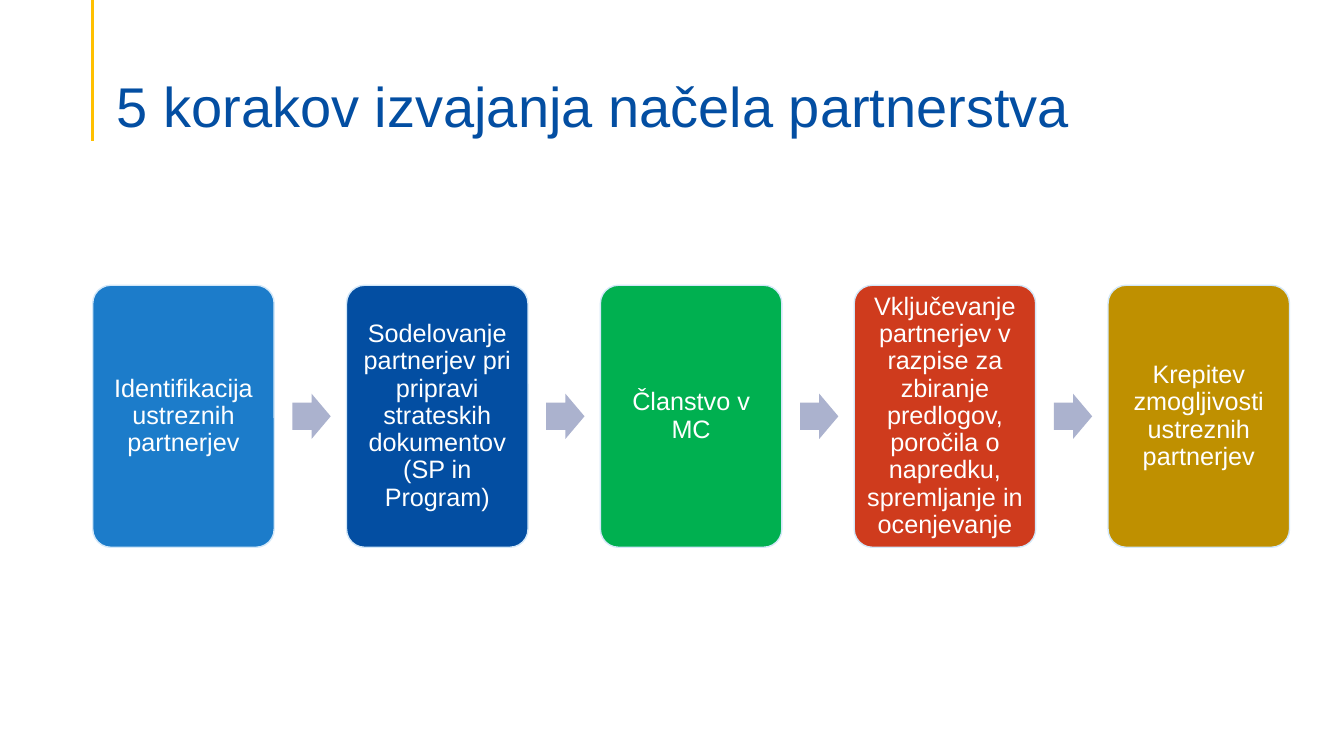
import pptx
import pptx.util
import pptx.dml.color
import pptx.enum.shapes
import pptx.enum.text
import lxml.etree

Inches = pptx.util.Inches
Pt = pptx.util.Pt
Shape = pptx.enum.shapes.MSO_SHAPE
Anchor = pptx.enum.text.MSO_ANCHOR
Align = pptx.enum.text.PP_ALIGN

COLOURS = {
    "rule": "FFC000",
    "title": "034EA2",
    "arrow": "ABB2CE",
    "outline": "D3E8F9",
    "text": "FFFFFF",
    "sky": "1C7CCA",
    "navy": "034EA2",
    "green": "00B050",
    "red": "CF3B1D",
    "ochre": "BF9000",
}
STEPS = [
    ("Identifikacija ustreznih partnerjev", "sky"),
    ("Sodelovanje partnerjev pri pripravi strateskih dokumentov (SP in Program)", "navy"),
    ("Članstvo v MC", "green"),
    ("Vključevanje partnerjev v razpise za zbiranje predlogov, poročila o napredku, "
     "spremljanje in ocenjevanje", "red"),
    ("Krepitev zmogljivosti ustreznih partnerjev", "ochre"),
]
LEFT = 0.92
LAST_LEFT = 10.99
PITCH = (LAST_LEFT - LEFT) / (len(STEPS) - 1)
CARD_TOP, CARD_WIDTH, CARD_HEIGHT = 2.83, 1.8, 2.6
ARROW_OFFSET, ARROW_WIDTH, ARROW_HEIGHT = 1.98, 0.38, 0.45


def colour(name):
    return pptx.dml.color.RGBColor.from_string(COLOURS[name])


def write_text(shape, text, size, fill, align, anchor, insets):
    frame = shape.text_frame
    frame.word_wrap = True
    frame.vertical_anchor = anchor
    frame.margin_left, frame.margin_top, frame.margin_right, frame.margin_bottom = map(Inches, insets)
    para = frame.paragraphs[0]
    para.alignment = align
    para.line_spacing = 0.9
    span = para.add_run()
    span.text = text
    span.font.name = "Arial"
    span.font.size = Pt(size)
    span.font.color.rgb = colour(fill)


def add_block(page, kind, left, top, width, height, fill, adjustments):
    block = page.shapes.add_shape(kind, Inches(left), Inches(top), Inches(width), Inches(height))
    block.shadow.inherit = False
    block.fill.solid()
    block.fill.fore_color.rgb = colour(fill)
    block.line.fill.background()
    for index, value in enumerate(adjustments):
        block.adjustments[index] = value
    return block


def add_step(page, left, text, fill):
    card = add_block(page, Shape.ROUNDED_RECTANGLE, left, CARD_TOP, CARD_WIDTH, CARD_HEIGHT, fill, [0.1])
    card.line.color.rgb = colour("outline")
    card.line.width = Pt(1)
    write_text(card, text, size=18, fill="text", align=Align.CENTER,
               anchor=Anchor.MIDDLE, insets=[0.07] * 4)


def add_arrow(page, left):
    top = CARD_TOP + (CARD_HEIGHT - ARROW_HEIGHT) / 2
    add_block(page, Shape.RIGHT_ARROW, left, top, ARROW_WIDTH, ARROW_HEIGHT, "arrow", [0.6, 0.5])


def add_rule(page):
    rule = page.shapes.add_connector(pptx.enum.shapes.MSO_CONNECTOR.STRAIGHT,
                                     Inches(LEFT), Inches(0), Inches(LEFT), Inches(1.4))
    rule.line.color.rgb = colour("rule")
    rule.line.width = Pt(2.25)
    lxml.etree.SubElement(rule._element.spPr, pptx.oxml.ns.qn("a:effectLst"))


def add_title(page, text):
    box = page.shapes.add_textbox(Inches(1.06), Inches(0.53), Inches(11.5), Inches(0.86))
    write_text(box, text, size=40, fill="title", align=Align.LEFT,
               anchor=Anchor.BOTTOM, insets=[0.1, 0.05, 0.1, 0])


def main():
    deck = pptx.Presentation()
    deck.slide_width = Inches(13.33)
    deck.slide_height = Inches(7.5)
    page = deck.slides.add_slide(deck.slide_layouts[6])
    add_rule(page)
    for index, (text, fill) in enumerate(STEPS):
        left = LEFT + index * PITCH
        add_step(page, left, text, fill)
        if index < len(STEPS) - 1:
            add_arrow(page, left + ARROW_OFFSET)
    add_title(page, "5 korakov izvajanja načela partnerstva")
    deck.save("out.pptx")


if __name__ == "__main__":
    main()
